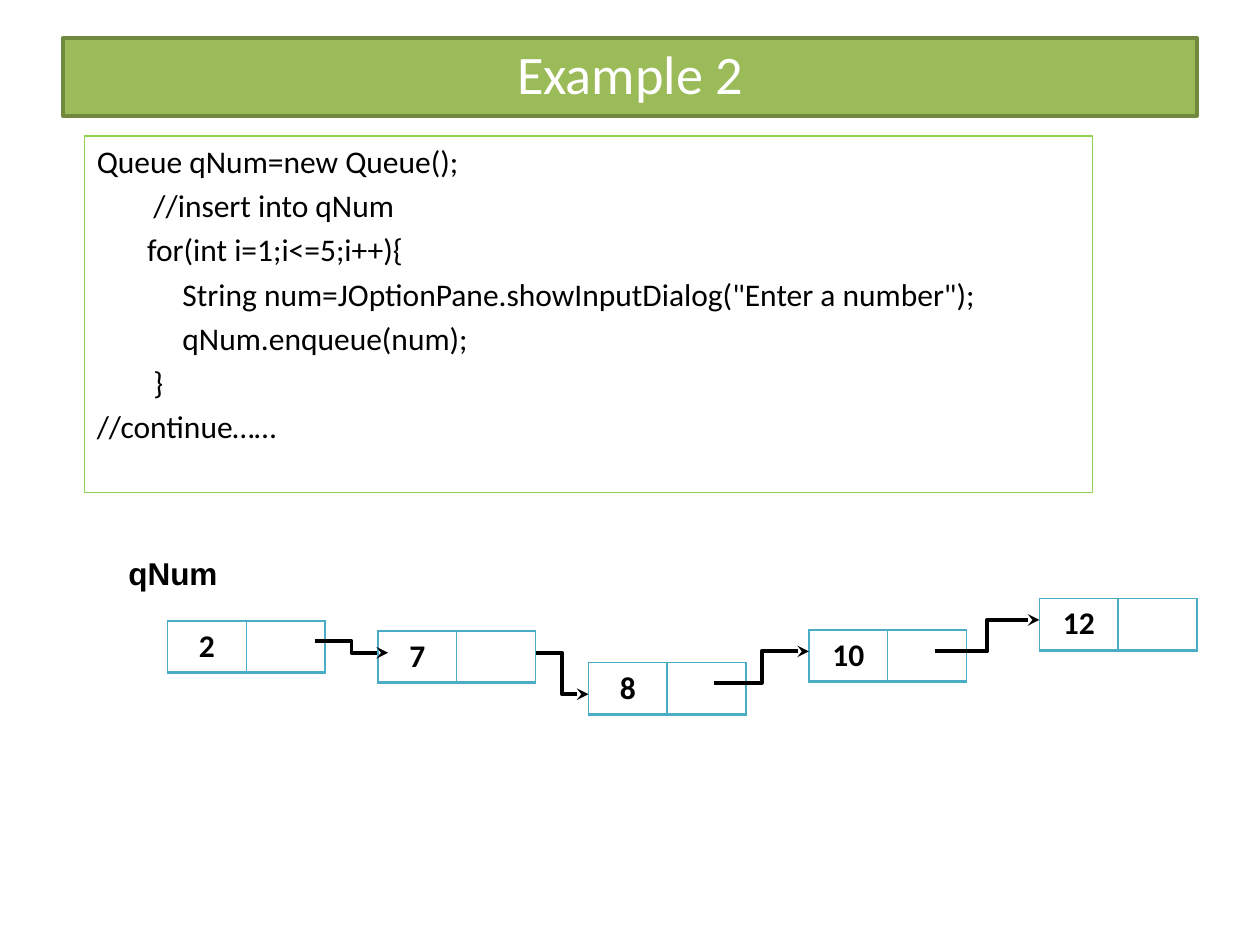
from dataclasses import dataclass

from lxml.etree import SubElement
from pptx import Presentation
from pptx.dml.color import RGBColor
from pptx.enum.shapes import MSO_CONNECTOR, MSO_SHAPE
from pptx.enum.text import MSO_ANCHOR, PP_ALIGN
from pptx.oxml import parse_xml
from pptx.oxml.ns import nsdecls, qn
from pptx.slide import Slide
from pptx.util import Inches, Pt

NODE_WIDTH, NODE_HEIGHT = 1.25, 0.41
BORDER_WIDTHS = {"lnL": 1, "lnR": 1, "lnT": 1, "lnB": 2}
NODE_COLOR = "4BACC6"


@dataclass(frozen=True)
class CodeLine:
    text: str
    indent: float = 0


@dataclass(frozen=True)
class Node:
    value: str
    left: float
    top: float


@dataclass(frozen=True)
class Link:
    start: tuple[float, float]
    end: tuple[float, float]


CODE = [
    CodeLine("Queue qNum=new Queue();"),
    CodeLine("//insert into qNum", 0.45),
    CodeLine("for(int i=1;i<=5;i++){", 0.4),
    CodeLine('String num=JOptionPane.showInputDialog("Enter a number");', 0.68),
    CodeLine("qNum.enqueue(num);", 0.68),
    CodeLine("}", 0.45),
    CodeLine("//continue……"),
]
NODES = [
    Node("2", 1.33, 4.93),
    Node("7", 3, 5.01),
    Node("8", 4.67, 5.26),
    Node("10", 6.42, 5),
    Node("12", 8.25, 4.75),
]
LINKS = [
    Link((2.5, 5.09), (3.08, 5.18)),
    Link((4.25, 5.18), (4.67, 5.51)),
    Link((5.67, 5.42), (6.42, 5.17)),
    Link((7.42, 5.17), (8.25, 4.92)),
]


def color(value: str) -> RGBColor:
    return RGBColor.from_string(value)


def write(paragraph, text: str, font_color: str = "000000", **changes) -> None:
    run = paragraph.add_run()
    run.text = text
    formats = {"name": "Calibri", "size": Pt(18), "bold": False} | changes
    for name, value in formats.items():
        setattr(run.font, name, value)
    run.font.color.rgb = color(font_color)


def add_title(slide: Slide, text: str) -> None:
    shape = slide.shapes.add_shape(
        MSO_SHAPE.RECTANGLE, Inches(0.5), Inches(0.3), Inches(9), Inches(0.62)
    )
    shape.shadow.inherit = False
    shape.fill.solid()
    shape.fill.fore_color.rgb = color("9BBB59")
    shape.line.color.rgb = color("71893F")
    shape.line.width = Pt(2)
    shape.text_frame.vertical_anchor = MSO_ANCHOR.MIDDLE
    paragraph = shape.text_frame.paragraphs[0]
    paragraph.alignment = PP_ALIGN.CENTER
    paragraph.line_spacing = 0.9
    write(paragraph, text, "FFFFFF", size=Pt(31))


def add_code(slide: Slide, lines: list[CodeLine]) -> None:
    shape = slide.shapes.add_textbox(Inches(0.67), Inches(1.08), Inches(8), Inches(2.83))
    shape.line.color.rgb = color("92D050")
    shape.line.width = Pt(0.75)
    frame = shape.text_frame
    frame.word_wrap = True
    for index, line in enumerate(lines):
        paragraph = frame.add_paragraph() if index else frame.paragraphs[0]
        paragraph.space_before = Pt(3.6 if index else 0)
        paragraph._p.get_or_add_pPr().set("marL", str(Inches(line.indent)))
        write(paragraph, line.text)


def add_label(slide: Slide, text: str) -> None:
    shape = slide.shapes.add_textbox(Inches(0.92), Inches(4.35), Inches(0.92), Inches(0.4))
    shape.text_frame.word_wrap = True
    write(shape.text_frame.paragraphs[0], text, name="Arial", bold=True)


def set_borders(cell) -> None:
    properties = cell._tc.get_or_add_tcPr()
    for index, (side, width) in enumerate(BORDER_WIDTHS.items()):
        border = parse_xml(
            f'<a:{side} {nsdecls("a")} w="{Pt(width)}"><a:solidFill>'
            f'<a:srgbClr val="{NODE_COLOR}"/></a:solidFill></a:{side}>'
        )
        properties.insert(index, border)


def add_node(slide: Slide, node: Node) -> None:
    table = slide.shapes.add_table(
        1, 2, Inches(node.left), Inches(node.top), Inches(NODE_WIDTH), Inches(NODE_HEIGHT)
    ).table
    table.first_row = False
    table.horz_banding = False
    for cell in table.iter_cells():
        cell.fill.background()
        set_borders(cell)
    paragraph = table.cell(0, 0).text_frame.paragraphs[0]
    paragraph.alignment = PP_ALIGN.CENTER
    write(paragraph, node.value, bold=True)


def add_link(slide: Slide, link: Link) -> None:
    points = [Inches(value) for value in (*link.start, *link.end)]
    connector = slide.shapes.add_connector(MSO_CONNECTOR.ELBOW, *points)
    connector.line.color.rgb = color("000000")
    connector.line.width = Pt(2.25)
    SubElement(connector.line._get_or_add_ln(), qn("a:tailEnd"), type="stealth")
    SubElement(connector._element.spPr, qn("a:effectLst"))


def main() -> None:
    presentation = Presentation()
    presentation.slide_width = Inches(10)
    presentation.slide_height = Inches(7.5)
    slide = presentation.slides.add_slide(presentation.slide_layouts[6])
    add_code(slide, CODE)
    add_title(slide, "Example 2")
    for node in NODES:
        add_node(slide, node)
    for link in LINKS:
        add_link(slide, link)
    add_label(slide, "qNum")
    presentation.save("out.pptx")


if __name__ == "__main__":
    main()
